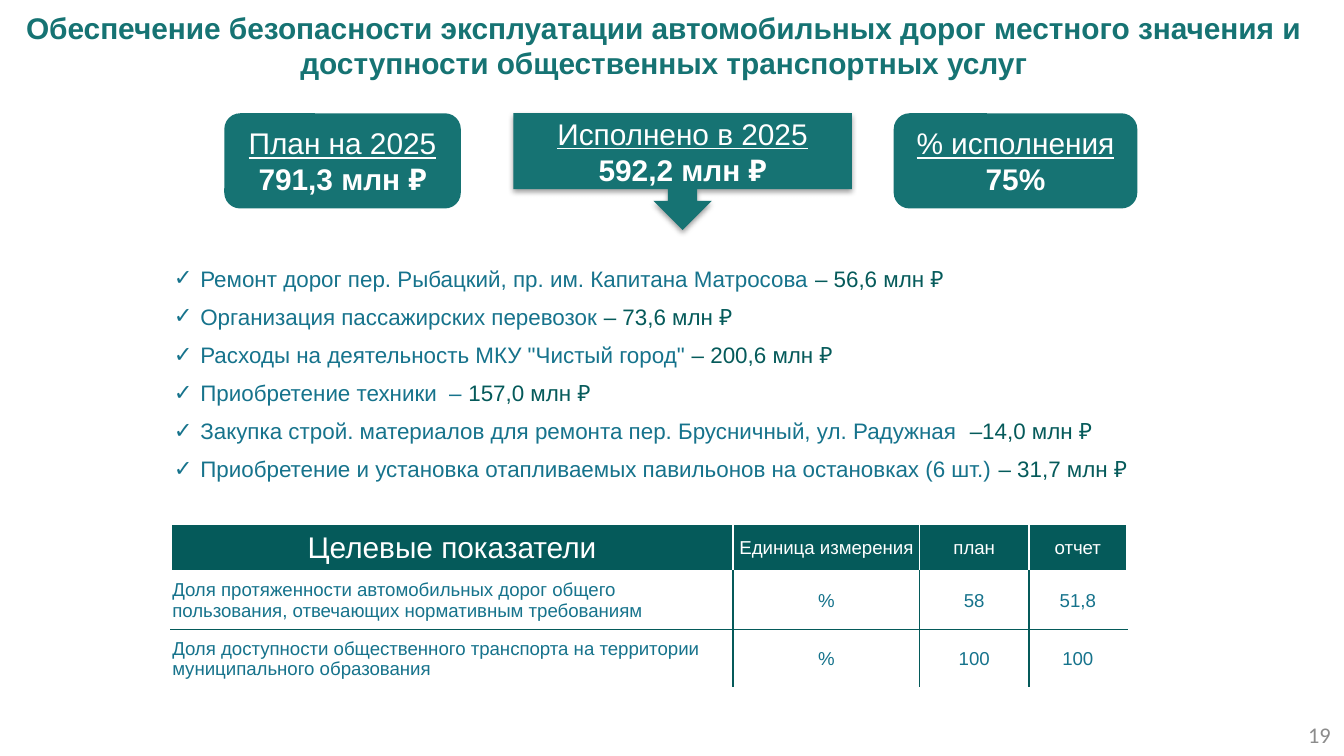
from lxml import etree
from pptx import Presentation
from pptx.dml.color import RGBColor
from pptx.enum.shapes import MSO_SHAPE
from pptx.enum.text import MSO_ANCHOR, MSO_AUTO_SIZE, PP_ALIGN
from pptx.oxml.ns import qn
from pptx.util import Pt

LEFT, RIGHT = PP_ALIGN.LEFT, PP_ALIGN.RIGHT
CENTER, JUSTIFY = PP_ALIGN.CENTER, PP_ALIGN.JUSTIFY
TOP, MIDDLE = MSO_ANCHOR.TOP, MSO_ANCHOR.MIDDLE
ROUND, CALLOUT = MSO_SHAPE.ROUNDED_RECTANGLE, MSO_SHAPE.DOWN_ARROW_CALLOUT

COLORS = {"teal": "167373", "blue": "16738C", "dark": "055A5A",
          "white": "FFFFFF", "gray": "8C8C8C", "black": "000000"}

TITLE = ("Обеспечение безопасности эксплуатации автомобильных дорог местного "
         "значения и доступности общественных транспортных услуг")
# shape, left, width, height, label, value
CARDS = [
    (ROUND, 120.2, 126.7, 51, "План на 2025", "791,3 млн ₽"),
    (CALLOUT, 275, 181.4, 62.6, "Исполнено в 2025", "592,2 млн ₽"),
    (ROUND, 478.8, 130.5, 51, "% исполнения", "75%"),
]
ITEMS = [
    ("Ремонт дорог пер. Рыбацкий, пр. им. Капитана Матросова ", "– 56,6 млн ₽"),
    ("Организация пассажирских перевозок ", "– 73,6 млн ₽"),
    ('Расходы на деятельность МКУ "Чистый город" ', "– 200,6 млн ₽"),
    ("Приобретение техники  – ", "157,0 млн ₽"),
    ("Закупка строй. материалов для ремонта пер. Брусничный, ул. Радужная  ",
     "–14,0 млн ₽"),
    ("Приобретение и установка отапливаемых павильонов на остановках (6 шт.) ",
     "– 31,7 млн ₽"),
]
ROWS = [
    ("Целевые показатели", "Единица измерения", "план", "отчет"),
    ("Доля протяженности автомобильных дорог общего пользования, "
     "отвечающих нормативным требованиям", "%", "58", "51,8"),
    ("Доля доступности общественного транспорта на территории "
     "муниципального образования", "%", "100", "100"),
]
COLS = [301, 100, 58.5, 52.5]
HEIGHTS = [25.2, 31.2, 31.2]


def rgb(name):
    return RGBColor.from_string(COLORS[name])


def style(font, size, color, bold=False, name="Arial"):
    font.name, font.size, font.bold = name, Pt(size), bold
    font.color.rgb = rgb(color)


def place(shape, *box):
    shape.left, shape.top, shape.width, shape.height = map(Pt, box)


def add(parent, tag, **attrs):
    return etree.SubElement(parent, qn(tag), attrs)


def add_shadow(shape):
    effects = shape._element.spPr.find(qn("a:effectLst"))
    outer = add(effects, "a:outerShdw", blurRad=str(Pt(3.1)),
                dist=str(Pt(1.6)), dir="5400000", rotWithShape="0")
    color = add(outer, "a:srgbClr", val=COLORS["black"])
    add(color, "a:alpha", val="38000")


def add_card(slide, kind, left, width, height, label, value):
    card = slide.shapes.add_shape(kind, Pt(left), Pt(60.7), Pt(width), Pt(height))
    card.shadow.inherit = False
    if kind == CALLOUT:
        add_shadow(card)
    card.fill.solid()
    card.fill.fore_color.rgb = rgb("teal")
    card.line.fill.background()
    frame = card.text_frame
    frame.vertical_anchor = MIDDLE
    frame.text = f"{label}\n{value}"
    for para, bold in zip(frame.paragraphs, (False, True)):
        para.alignment = CENTER
        style(para.font, 16, "white", bold)
        para.font.underline = not bold


def add_list(frame):
    frame.auto_size = MSO_AUTO_SIZE.NONE
    frame.vertical_anchor = TOP
    for i, parts in enumerate(ITEMS):
        para = frame.add_paragraph() if i else frame.paragraphs[0]
        props = para._p.get_or_add_pPr()
        props.set("marL", str(Pt(22.3)))
        props.set("indent", str(Pt(-14.2)))
        add(props, "a:buFont", typeface="Arial")
        add(props, "a:buChar", char="✓")
        para.alignment = JUSTIFY
        para.space_before = Pt(6 if i else 0)
        for text, color in zip(parts, ("blue", "dark")):
            run = para.add_run()
            run.text = text
            style(run.font, 12, color)


def add_edges(cell, row, col):
    """Draw inner rules only: white in the header, dark below it."""
    edges = {"a:lnL": col > 0, "a:lnR": col < len(COLS) - 1,
             "a:lnT": row == 2, "a:lnB": row == 1}
    props = cell._tc.get_or_add_tcPr()
    for tag, shown in edges.items():
        if shown:
            line = add(props, tag, w=str(Pt(1)))
            fill = add(line, "a:solidFill")
            add(fill, "a:srgbClr", val=COLORS["dark" if row else "white"])


def add_grid(slide):
    table = slide.shapes.add_table(len(ROWS), len(COLS), Pt(91.7), Pt(280.8),
                                   Pt(sum(COLS)), Pt(sum(HEIGHTS))).table
    table.horz_banding = False
    for column, width in zip(table.columns, COLS):
        column.width = Pt(width)
    for r, texts in enumerate(ROWS):
        table.rows[r].height = Pt(HEIGHTS[r])
        for c, text in enumerate(texts):
            cell = table.cell(r, c)
            cell.text = text
            cell.vertical_anchor = MIDDLE
            cell.margin_left = cell.margin_right = cell.margin_top = Pt(0.6)
            cell.margin_bottom = Pt(0)
            add_edges(cell, r, c)
            if r:
                cell.fill.background()
            else:
                cell.fill.solid()
                cell.fill.fore_color.rgb = rgb("dark")
            para = cell.text_frame.paragraphs[0]
            para.alignment = LEFT if r and not c else CENTER
            style(para.font, 10 if r or c else 16, "blue" if r else "white")


def main():
    deck = Presentation()
    deck.slide_width, deck.slide_height = Pt(720), Pt(405)
    slide = deck.slides.add_slide(deck.slide_layouts[1])

    title, body = slide.placeholders
    place(title, 0, 1.4, 711.4, 46)
    frame = title.text_frame
    frame.text = TITLE
    frame.auto_size = MSO_AUTO_SIZE.NONE
    frame.vertical_anchor = TOP
    para = frame.paragraphs[0]
    para.alignment = CENTER
    style(para.font, 16, "teal", True)

    place(body, 77.8, 138.2, 537.8, 124.6)
    add_list(body.text_frame)
    for card in CARDS:
        add_card(slide, *card)
    add_grid(slide)

    number = slide.shapes.add_textbox(Pt(552.2), Pt(383), Pt(167.8), Pt(21.6))
    frame = number.text_frame
    frame.word_wrap = True
    frame.vertical_anchor = MIDDLE
    frame.text = "19"
    para = frame.paragraphs[0]
    para.alignment = RIGHT
    style(para.font, 12, "gray", name="Calibri")
    deck.save("out.pptx")


if __name__ == "__main__":
    main()
